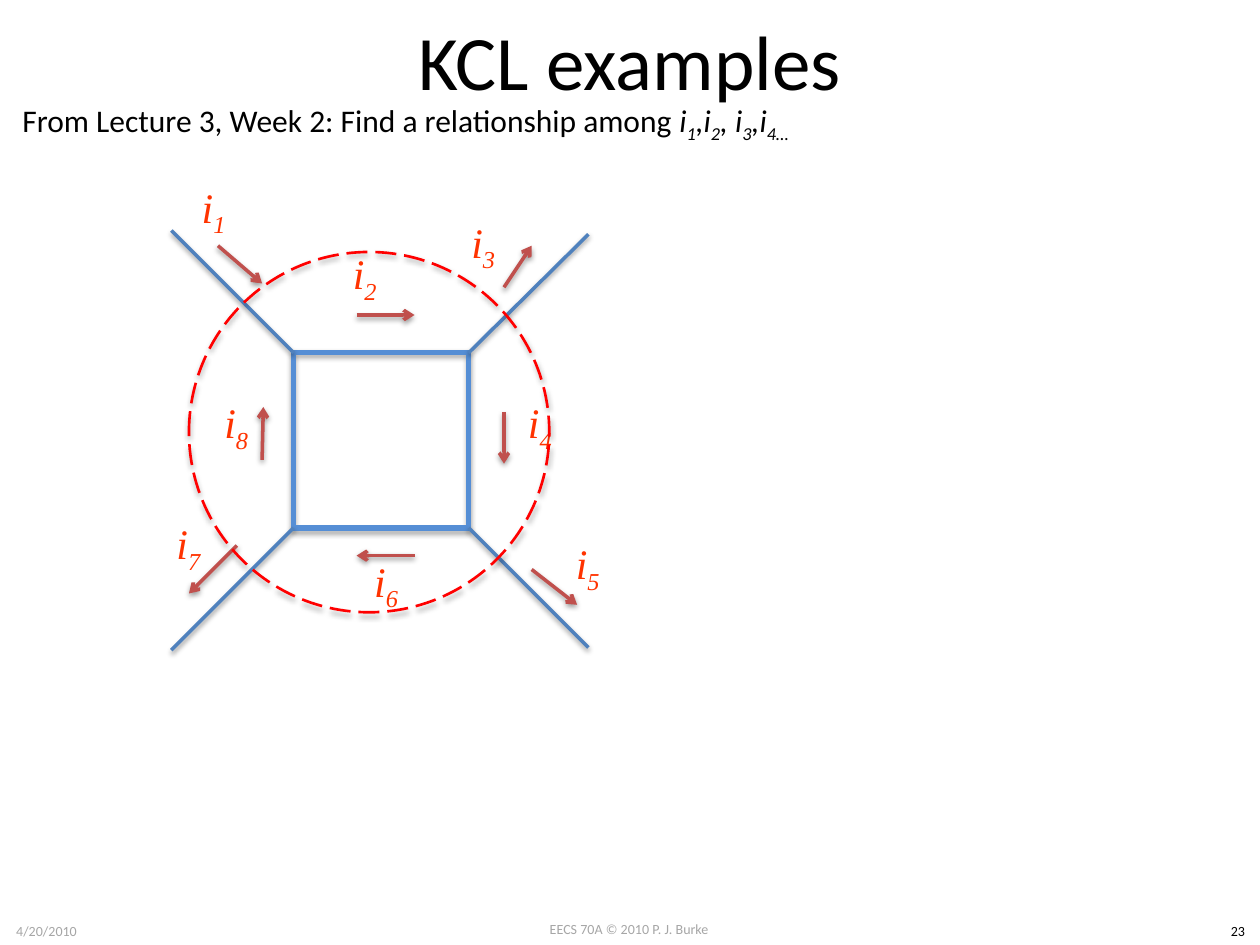
"""Build the KCL examples slide: a four-node circuit with its branch currents."""
from lxml.etree import SubElement
from pptx import Presentation
from pptx.dml.color import RGBColor
from pptx.enum.dml import MSO_LINE
from pptx.enum.shapes import MSO_CONNECTOR, MSO_SHAPE
from pptx.enum.text import MSO_ANCHOR, PP_ALIGN
from pptx.oxml.ns import qn
from pptx.util import Inches, Pt

BLACK = RGBColor(0x00, 0x00, 0x00)
GRAY = RGBColor(0xA6, 0xA6, 0xA6)
ORANGE = RGBColor(0xFF, 0x33, 0x00)
RED = RGBColor(0xFF, 0x00, 0x00)
ARROW = RGBColor(0xC0, 0x50, 0x4D)
WIRE = RGBColor(0x4F, 0x81, 0xBD)
SQUARE = RGBColor(0x55, 0x8E, 0xD5)


def add_text(box, runs, align=PP_ALIGN.CENTER, anchor=MSO_ANCHOR.TOP, wrap=True, **font):
    """Add a text box of (text, italic, subscript) runs."""
    tf = s.shapes.add_textbox(*map(Inches, box)).text_frame
    tf.word_wrap, tf.vertical_anchor = wrap, anchor
    p = tf.paragraphs[0]
    p.alignment = align
    for text, italic, subscript in runs:
        r = p.add_run()
        r.text = text
        r.font.color.rgb = font["color"]
        for name, value in {"name": font["face"], "size": Pt(font["size"]), "italic": italic}.items():
            setattr(r.font, name, value)
        if subscript:
            r.font._element.set("baseline", "-25000")


def style_line(sp, color, width, opacity, distance, arrow=False):
    """Set the outline, the soft shadow below and an optional arrowhead."""
    sp.line.color.rgb = color
    sp.line.width = Pt(width)
    if arrow:
        SubElement(sp.line._get_or_add_ln(), qn("a:tailEnd"), type="arrow")
    effects = SubElement(sp._element.spPr, qn("a:effectLst"))
    shadow = SubElement(effects, qn("a:outerShdw"), blurRad=str(Pt(3.1)), dist=str(Pt(distance)),
                        dir="5400000", rotWithShape="0")
    black = SubElement(shadow, qn("a:srgbClr"), val="000000")
    SubElement(black, qn("a:alpha"), val=str(opacity * 1000))


prs = Presentation()
prs.slide_width, prs.slide_height = Inches(10), Inches(7.5)
s = prs.slides.add_slide(prs.slide_layouts[5])

title = s.shapes.title
for name, value in {"left": 0.5, "top": 0, "width": 9, "height": 0.95}.items():
    setattr(title, name, Inches(value))
title.text_frame.text = "KCL examples"
title.text_frame.vertical_anchor = MSO_ANCHOR.MIDDLE
p = title.text_frame.paragraphs[0]
p.alignment = PP_ALIGN.CENTER
p.font.color.rgb = BLACK
for name, value in {"name": "Calibri", "size": Pt(44)}.items():
    setattr(p.font, name, value)

footers = [
    ((3.83, 7.26, 2.33, 0.24), "EECS 70A © 2010 P. J. Burke", GRAY),
    ((0, 7.27, 0.74, 0.24), "4/20/2010", GRAY),
    ((9.65, 7.27, 0.35, 0.24), "23", BLACK),
]
for box, text, color in footers:
    add_text(box, [(text, False, False)], face="Calibri", size=8, color=color)

question = [("From Lecture 3, Week 2: Find a relationship among ", False, False)]
for symbol, index in [("i", "1"), (",i", "2"), (", i", "3"), (",i", "4…")]:
    question += [(symbol, True, False), (index, True, True)]
add_text((0.08, 0.75, 6.42, 0.4), question, align=PP_ALIGN.LEFT, wrap=False,
         face="Calibri", size=18, color=BLACK)

left, top, side = 2.33, 2.8, 1.39
right, bottom = left + side, top + side
square = s.shapes.add_shape(MSO_SHAPE.RECTANGLE, *map(Inches, (left, top, side, side)))
square.fill.background()
style_line(square, SQUARE, 3, 35, 1.8)

wires = [
    (right, top, 4.67, 1.86),
    (left, top, 1.36, 1.83),
    (right, bottom, 4.67, 5.14),
    (left, bottom, 1.36, 5.16),
]
for ends in wires:
    wire = s.shapes.add_connector(MSO_CONNECTOR.STRAIGHT, *map(Inches, ends))
    style_line(wire, WIRE, 2, 38, 1.6)

currents = [
    ((1.31, 1.36), (1.73, 1.95, 2.08, 2.25)),
    ((2.51, 1.89), (2.83, 2.5, 3.29, 2.5)),
    ((3.45, 1.64), (4, 2.28, 4.22, 1.95)),
    ((3.9, 3.07), (4, 3.27, 4, 3.68)),
    ((4.28, 4.19), (4.22, 4.52, 4.58, 4.8)),
    ((2.68, 4.33), (3.29, 4.41, 2.83, 4.41)),
    ((1.11, 4.03), (1.88, 4.33, 1.5, 4.71)),
    ((1.49, 3.07), (2.08, 3.65, 2.09, 3.23)),
]
for number, (corner, ends) in enumerate(currents, 1):
    arrow = s.shapes.add_connector(MSO_CONNECTOR.STRAIGHT, *map(Inches, ends))
    style_line(arrow, ARROW, 2, 38, 1.6, arrow=True)
    add_text((*corner, 0.77, 0.61), [("i", True, False), (str(number), True, True)],
             anchor=MSO_ANCHOR.MIDDLE, face="Times New Roman", size=24, color=ORANGE)

boundary = s.shapes.add_shape(MSO_SHAPE.OVAL, *map(Inches, (1.5, 2, 2.86, 2.86)))
boundary.fill.background()
boundary.line.dash_style = MSO_LINE.LONG_DASH
style_line(boundary, RED, 1.5, 35, 1.8)

prs.save("out.pptx")
